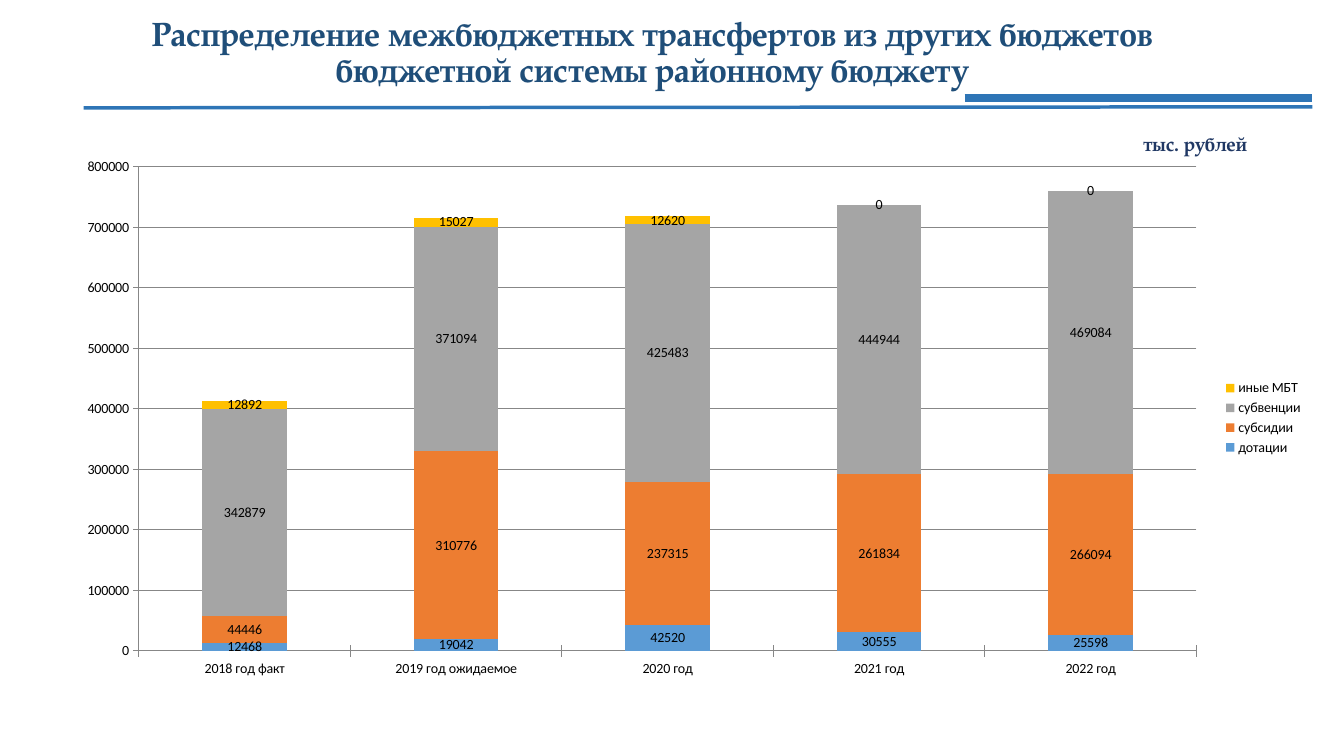
from dataclasses import dataclass

from lxml.etree import SubElement
from pptx import Presentation
from pptx.chart.data import CategoryChartData
from pptx.dml.color import RGBColor
from pptx.enum.chart import XL_CHART_TYPE, XL_LEGEND_POSITION, XL_TICK_MARK
from pptx.enum.shapes import MSO_CONNECTOR
from pptx.enum.text import MSO_ANCHOR, PP_ALIGN
from pptx.oxml.ns import qn
from pptx.util import Pt


@dataclass(frozen=True)
class Theme:
    heading_font: str = "TeX Gyre Pagella"
    chart_font: str = "Calibri"
    title_size: int = 24
    unit_size: int = 14
    chart_size: int = 10
    title: str = "1F4E79"
    unit: str = "203864"
    rule: str = "2E75B6"
    chart_text: str = "000000"
    grid: str = "878787"


THEME = Theme()
YEARS = ["2018 год факт", "2019 год ожидаемое", "2020 год", "2021 год", "2022 год"]
TRANSFERS = [
    ("дотации", "5B9BD5", (12468, 19042, 42520, 30555, 25598)),
    ("субсидии", "ED7D31", (44446, 310776, 237315, 261834, 266094)),
    ("субвенции", "A5A5A5", (342879, 371094, 425483, 444944, 469084)),
    ("иные МБТ", "FFC000", (12892, 15027, 12620, 0, 0)),
]


def rgb(color):
    return RGBColor.from_string(color)


def add_heading(slide, box, text, size, color, align, anchor, spacing):
    frame = slide.shapes.add_textbox(*map(Pt, box)).text_frame
    frame.word_wrap = True
    frame.vertical_anchor = anchor
    paragraph = frame.paragraphs[0]
    paragraph.alignment = align
    paragraph.line_spacing = spacing
    run = paragraph.add_run()
    run.text = text
    run.font.name = THEME.heading_font
    run.font.size = Pt(size)
    run.font.bold = True
    run.font.color.rgb = rgb(color)


def add_rules(slide, box):
    left, top, width, height = box
    right, bottom = left + width, top + height
    accent_left = right - 248.4
    for start, end, weight in (
        ((left, bottom), (right, bottom - 0.72), 2.5),
        ((accent_left, top), (right, top), 6),
    ):
        rule = slide.shapes.add_connector(
            MSO_CONNECTOR.STRAIGHT, *map(Pt, start + end)
        )
        rule.line.color.rgb = rgb(THEME.rule)
        rule.line.width = Pt(weight)
        SubElement(rule._element.spPr, qn("a:effectLst"))


def add_transfer_chart(slide, box):
    data = CategoryChartData()
    data.categories = YEARS
    for name, _, amounts in TRANSFERS:
        data.add_series(name, amounts)
    chart = slide.shapes.add_chart(
        XL_CHART_TYPE.COLUMN_STACKED, *map(Pt, box), data
    ).chart
    chart.has_title = False
    chart.font.name = THEME.chart_font
    chart.font.size = Pt(THEME.chart_size)
    chart.font.color.rgb = rgb(THEME.chart_text)
    chart.has_legend = True
    chart.legend.position = XL_LEGEND_POSITION.RIGHT
    chart.legend.include_in_layout = False

    plot = chart.plots[0]
    plot.gap_width = 150
    plot.overlap = 100
    plot.vary_by_categories = False
    for series, (_, color, _) in zip(plot.series, TRANSFERS):
        series.format.fill.solid()
        series.format.fill.fore_color.rgb = rgb(color)
        series.data_labels.show_value = True

    chart.value_axis.has_major_gridlines = True
    gridlines = chart.value_axis.major_gridlines.format.line
    for line in (
        gridlines, chart.value_axis.format.line, chart.category_axis.format.line
    ):
        line.color.rgb = rgb(THEME.grid)
        line.width = Pt(0.75)
    for axis in (chart.value_axis, chart.category_axis):
        axis.major_tick_mark = XL_TICK_MARK.CROSS


def build_transfers_slide(prs, box):
    left, top, width, height = box
    slide = prs.slides.add_slide(prs.slide_layouts[6])
    add_heading(
        slide, (left + 91.44, top + 11.52, 748.8, 53.28),
        "Распределение межбюджетных трансфертов из других бюджетов "
        "бюджетной системы районному бюджету",
        THEME.title_size, THEME.title, PP_ALIGN.CENTER, MSO_ANCHOR.MIDDLE, 0.9,
    )
    add_rules(slide, (left + 59.76, top + 69.84, width - 82.32, 7.2))
    add_heading(
        slide, (left + 773.28, top + 90.72, 124.56, 24.48), "тыс. рублей",
        THEME.unit_size, THEME.unit, PP_ALIGN.RIGHT, MSO_ANCHOR.TOP, 1.0,
    )
    add_transfer_chart(
        slide, (left + 44.64, top + 105.84, width - 66.48, height - 154.8)
    )


def main():
    prs = Presentation()
    width, height = 960, 540
    prs.slide_width, prs.slide_height = Pt(width), Pt(height)
    build_transfers_slide(prs, (0, 0, width, height))
    prs.save("out.pptx")


if __name__ == "__main__":
    main()
